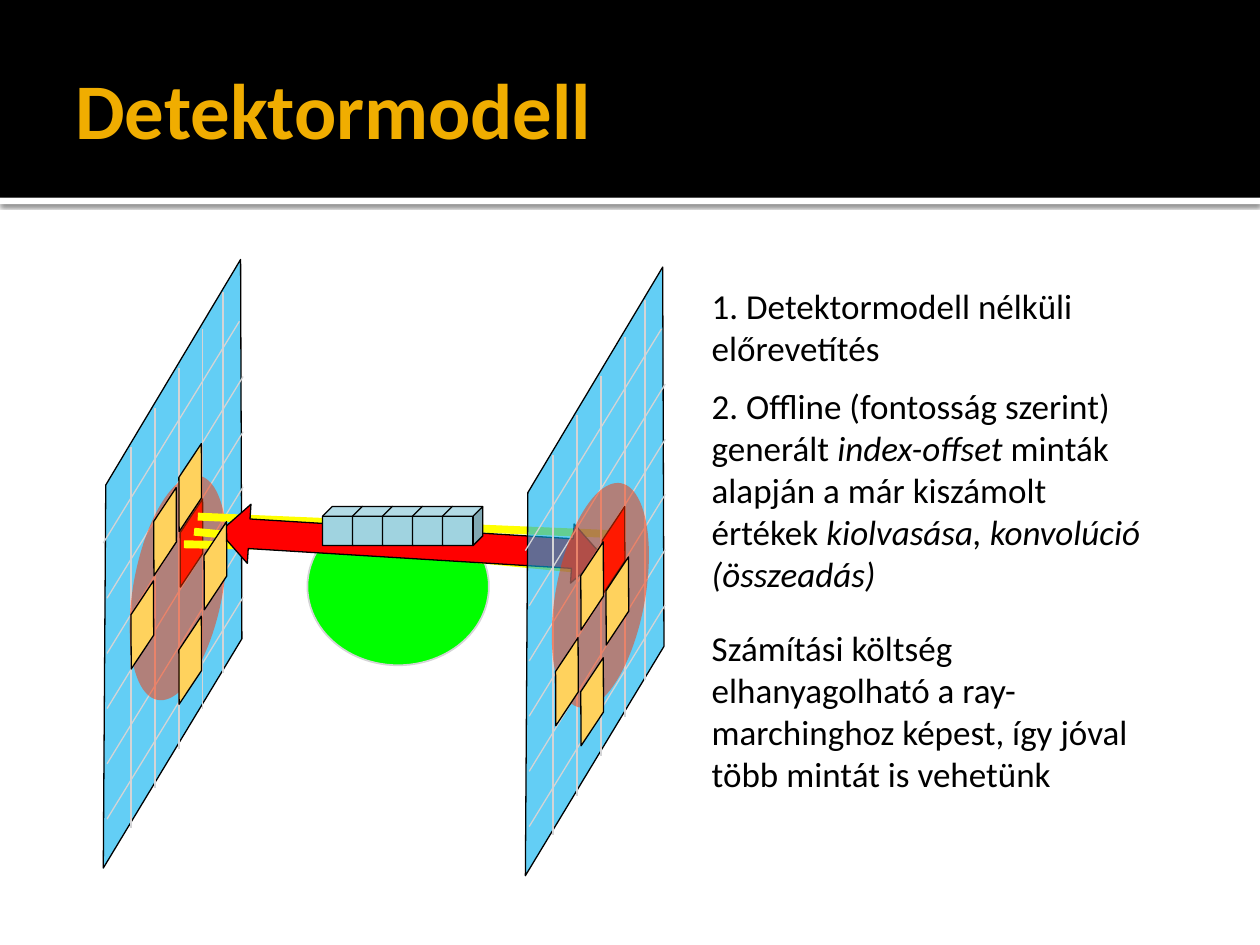
from dataclasses import dataclass

from lxml import etree
from pptx import Presentation
from pptx.dml.color import RGBColor
from pptx.enum.shapes import MSO_CONNECTOR, MSO_SHAPE
from pptx.enum.text import MSO_ANCHOR, MSO_AUTO_SIZE
from pptx.oxml import parse_xml
from pptx.oxml.ns import nsdecls, qn
from pptx.util import Inches, Pt

RECTANGLE, OVAL, CUBE = MSO_SHAPE.RECTANGLE, MSO_SHAPE.OVAL, MSO_SHAPE.CUBE
TILE, DOUBLE_ARROW = MSO_SHAPE.PARALLELOGRAM, MSO_SHAPE.LEFT_RIGHT_ARROW
STRAIGHT = MSO_CONNECTOR.STRAIGHT
MIDDLE, TOP = MSO_ANCHOR.MIDDLE, MSO_ANCHOR.TOP
GROW, FIXED = MSO_AUTO_SIZE.SHAPE_TO_FIT_TEXT, MSO_AUTO_SIZE.NONE

COLUMNS, ROWS = 100, 75
CELL = Inches(10) // COLUMNS


@dataclass(frozen=True)
class Theme:
    font: str = "Calibri"
    title_size: float = 45
    body_size: float = 20
    thin: float = 0.75
    ray: float = 4.5
    black: str = "000000"
    white: str = "FFFFFF"
    title: str = "F0AD00"
    panel: str = "00B0F0"
    grid: str = "D4D4D6"
    hit: str = "FF0000"
    spot: str = "FF3300"
    body: str = "00FF00"
    beam: str = "FFFF00"
    voxel: str = "A0D3E0"
    sample: str = "FFD25D"


THEME = Theme()


def cells(*counts):
    return [round(count * CELL) for count in counts]


def paint(shape, fill, line=None, weight=THEME.thin, opacity=None):
    shape.shadow.inherit = False
    shape.fill.solid()
    shape.fill.fore_color.rgb = RGBColor.from_string(fill)
    if opacity:
        color = shape.fill._xPr.find(qn("a:solidFill"))[0]
        etree.SubElement(color, qn("a:alpha")).set("val", str(opacity * 1000))
    if line:
        shape.line.color.rgb = RGBColor.from_string(line)
        shape.line.width = Pt(weight)
    else:
        shape.line.fill.background()


def add_preset(shapes, kind, box, fill, rotation=0, adjustment=None, **style):
    shape = shapes.add_shape(kind, *cells(*box))
    shape.rotation = rotation
    if adjustment:
        shape.adjustments[0] = adjustment
    paint(shape, fill, **style)
    return shape


def add_line(shapes, start, end, color, weight=THEME.thin):
    line = shapes.add_connector(STRAIGHT, *cells(*start, *end))
    line.line.color.rgb = RGBColor.from_string(color)
    line.line.width = Pt(weight)
    etree.SubElement(line._element.spPr, qn("a:effectLst"))


def add_text(shapes, box, runs, size=THEME.body_size, color=THEME.black,
             bold=False, anchor=TOP, auto_size=GROW, right_inset=1):
    """Write one paragraph; runs are (text, italic) pairs."""
    frame = shapes.add_textbox(*cells(*box)).text_frame
    frame.word_wrap = True
    frame.auto_size = auto_size
    frame.vertical_anchor = anchor
    frame.margin_right = cells(right_inset)[0]
    for text, italic in runs:
        run = frame.paragraphs[0].add_run()
        run.text = text
        run.font.name = THEME.font
        run.font.size = Pt(size)
        run.font.bold = bold
        run.font.italic = italic
        run.font.color.rgb = RGBColor.from_string(color)


def add_header(shapes):
    strip = add_preset(shapes, RECTANGLE, (0, 15.7, COLUMNS, 0.5), THEME.white)
    effects = strip._element.spPr.find(qn("a:effectLst"))
    effects.append(parse_xml(
        f'<a:outerShdw {nsdecls("a")} blurRad="{Pt(2.5)}" dist="{Pt(0.8)}" '
        f'dir="5400000" algn="t" rotWithShape="0"><a:srgbClr val="{THEME.black}">'
        '<a:alpha val="60000"/></a:srgbClr></a:outerShdw>'))
    add_preset(shapes, RECTANGLE, (0, 0, COLUMNS, 15.7), THEME.black)
    add_text(shapes, (5, 1.7, 90, 13.7), [("Detektormodell", False)],
             size=THEME.title_size, color=THEME.title, bold=True,
             anchor=MIDDLE, auto_size=FIXED, right_inset=0.5)


def add_tile(shapes, left, top, fill):
    add_preset(shapes, TILE, (left, top, 6.8, 2.4), fill, rotation=303.6,
               adjustment=1.49, line=THEME.black)


def add_detector(shapes, dx=0, dy=0):
    """Draw one detector plane with its grid, hit tile and spot."""
    corners = [(8.4, 38.5), (8.2, 68.9), (19.2, 50.7), (19.1, 20.6)]
    points = [cells(x + dx, y + dy) for x, y in corners]
    outline = shapes.build_freeform(*points[0])
    outline.add_line_segments(points[1:], close=True)
    paint(outline.convert_to_shape(), THEME.panel, line=THEME.black, opacity=61)

    uprights = [(10.4 + 1.9 * i, 35.5 - 3.13 * i) for i in range(4)] + [(17.7, 23.2)]
    for x, y in uprights:
        add_line(shapes, (x + dx, y + dy), (x + dx, y + dy + 30.2), THEME.grid)
    for i in range(6):
        x, y = (19.3 if i else 19) + dx, 25.5 + 4.38 * i + dy
        add_line(shapes, (x, y), (x - 10.8, y + 17.6), THEME.grid)

    add_tile(shapes, 11.8 + dx, 41.9 + dy, THEME.hit)
    add_preset(shapes, OVAL, (5.1 + dx, 43.1 + dy, 18.1, 7.1), THEME.spot,
               rotation=280.4, opacity=50)


def add_beam(shapes):
    add_preset(shapes, OVAL, (24.4, 40.3, 14.4, 12.5), THEME.body,
               line=THEME.grid, weight=1)
    for start, end in [((15.7, 41), (48.8, 42.4)),
                       ((15.4, 42.2), (48.4, 45.4)),
                       ((14.6, 43.2), (48.8, 43.8))]:
        add_line(shapes, start, end, THEME.beam, THEME.ray)
    add_preset(shapes, DOUBLE_ARROW, (17.4, 40.8, 30.4, 4.7), THEME.hit,
               rotation=3.5, line=THEME.black)


def add_voxels(shapes):
    row = shapes.add_group_shape().shapes
    for i in range(5):
        add_preset(row, CUBE, (25.6 + 2.38 * i, 40.2, 3.2, 3.1), THEME.voxel,
                   line=THEME.black)


def add_samples(shapes):
    left_panel = [(11.7, 51.2), (7.9, 48.4), (13.7, 43.7), (9.7, 41)]
    right_panel = [(43.6, 45.3), (45.6, 46.5), (43.6, 54.5), (41.6, 52.9)]
    for left, top in left_panel + right_panel + [(11.7, 37.5)]:
        add_tile(shapes, left, top, THEME.sample)


def add_explanation(shapes):
    add_text(shapes, (55.5, 22.1, 40.2, 7.7),
             [("1. Detektormodell nélküli előrevetítés", False)])
    add_text(shapes, (55.5, 30, 36.2, 17.8),
             [("2. Offline (fontosság szerint) generált ", False),
              ("index-offset", True),
              (" minták alapján a már kiszámolt értékek ", False),
              ("kiolvasása, konvolúció (összeadás)", True)])
    add_text(shapes, (55.5, 49.2, 36.2, 17.8),
             [("Számítási költség elhanyagolható a ray-marchinghoz képest, "
               "így jóval több mintát is vehetünk", False)])


def main():
    deck = Presentation()
    deck.slide_width, deck.slide_height = cells(COLUMNS, ROWS)
    shapes = deck.slides.add_slide(deck.slide_layouts[6]).shapes
    add_header(shapes)
    add_detector(shapes)
    add_beam(shapes)
    add_detector(shapes, dx=33.5, dy=0.6)
    add_explanation(shapes)
    add_voxels(shapes)
    add_samples(shapes)
    deck.save("out.pptx")


if __name__ == "__main__":
    main()
